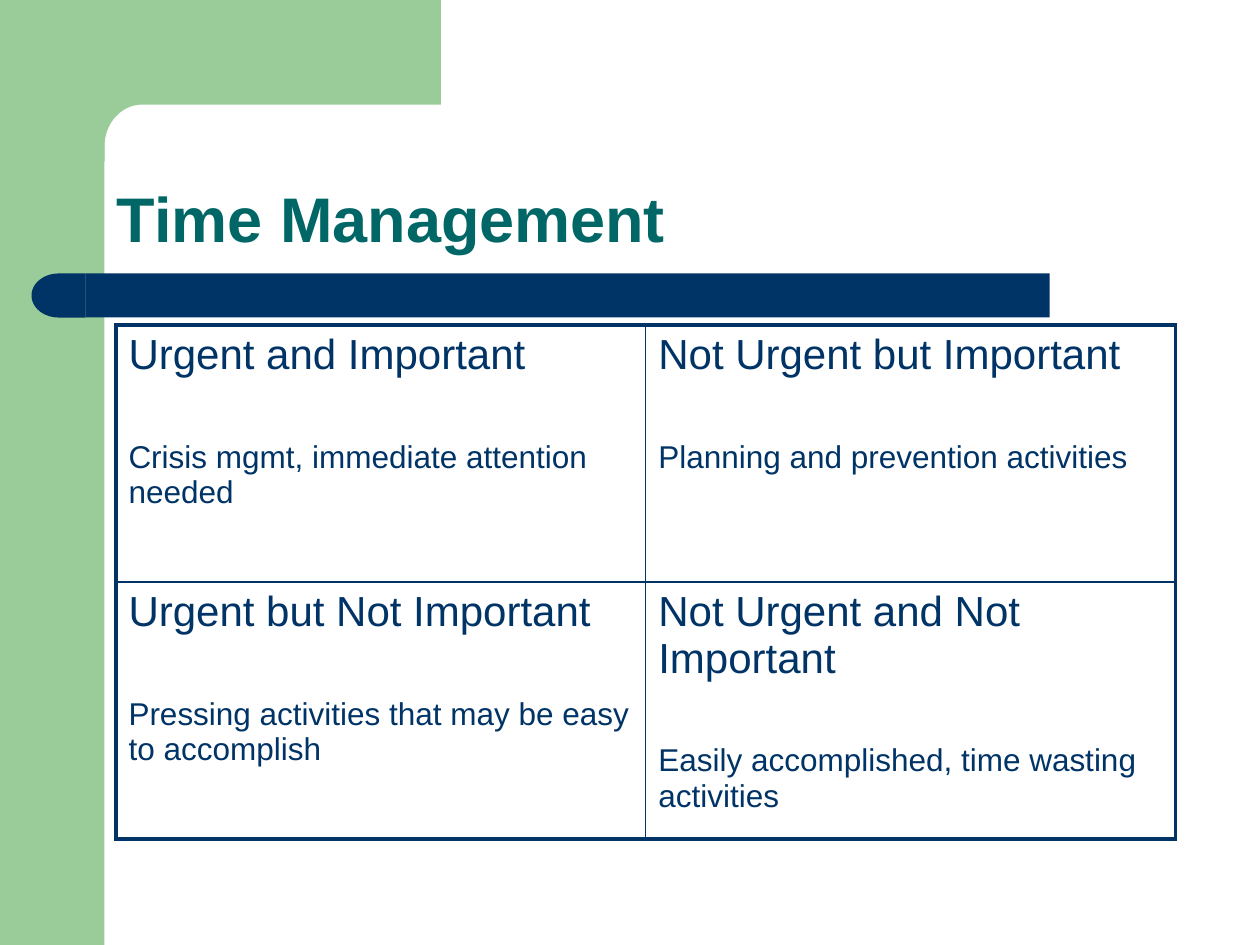
from math import cos, pi, sin

from lxml.etree import SubElement
from pptx import Presentation
from pptx.dml.color import RGBColor
from pptx.enum.shapes import MSO_SHAPE
from pptx.enum.text import MSO_ANCHOR
from pptx.oxml.ns import qn
from pptx.util import Inches, Pt

COLORS = {"green": "99CC99", "navy": "003366", "teal": "006666"}
TITLE = {"size": Pt(36), "bold": True, "name": "Arial"}
HEAD = {"size": Pt(24), "bold": False, "name": "Arial"}
BODY = {"size": Pt(18), "bold": False, "name": "Arial"}
GRID = [
    [("Urgent and Important", "Crisis mgmt, immediate attention needed"),
     ("Not Urgent but Important", "Planning and prevention activities")],
    [("Urgent but Not Important",
      "Pressing activities that may be easy to accomplish"),
     ("Not Urgent and Not Important",
      "Easily accomplished, time wasting activities")],
]


def color(name):
    return RGBColor.from_string(COLORS[name])


def paint(shape, name):
    shape.shadow.inherit = False
    shape.fill.solid()
    shape.fill.fore_color.rgb = color(name)
    shape.line.fill.background()


def write(para, text, style, name):
    run = para.add_run()
    run.text = text
    for key, value in style.items():
        setattr(run.font, key, value)
    run.font.color.rgb = color(name)


def add_frame(slide, left, top, width, height):
    """Green side strip and top band, with a rounded inner corner."""
    side = Inches(0.83)
    strip = slide.shapes.add_shape(MSO_SHAPE.RECTANGLE, left, top, side, height)
    paint(strip, "green")

    inner, band = left + side, top + Inches(0.83)
    wide, high = Inches(0.3), Inches(0.33)
    steps = 24
    curve = [(inner + wide * (1 - sin(pi / 2 * i / steps)),
              band + high * (1 - cos(pi / 2 * i / steps)))
             for i in range(steps, -1, -1)]
    curve = curve[::-1]
    start, low = left + Inches(0.5), top + Inches(1.28)
    pen = slide.shapes.build_freeform(start, top)
    pen.add_line_segments(
        [(start, low), (inner, low)] + curve_up(curve, inner, band, wide, high)
        + [(left + width, band), (left + width, top)])
    paint(pen.convert_to_shape(), "green")


def curve_up(curve, inner, band, wide, high):
    """Quarter arc from the side strip up to the top band."""
    count = len(curve) - 1
    return [(inner + wide * (1 - cos(pi / 2 * i / count)),
             band + high * (1 - sin(pi / 2 * i / count)))
            for i in range(count + 1)]


def add_bar(slide, left, top, width, height):
    """Navy bar with a round left end."""
    cap = Inches(0.43)
    bar = slide.shapes.add_shape(
        MSO_SHAPE.RECTANGLE, left + cap, top, width - cap, height)
    end = slide.shapes.add_shape(
        MSO_SHAPE.FLOWCHART_DELAY, left, top, cap, height)
    end.rotation = 180
    for shape in (bar, end):
        paint(shape, "navy")


def add_title(slide, text, *box):
    frame = slide.shapes.add_textbox(*box).text_frame
    frame.word_wrap = True
    frame.vertical_anchor = MSO_ANCHOR.BOTTOM
    para = frame.paragraphs[0]
    para.line_spacing = 0.9
    write(para, text, TITLE, "teal")


def add_edge(cell, side, width):
    props = cell._tc.get_or_add_tcPr()
    line = SubElement(props, qn(f"a:ln{side}"), w=str(Pt(width)))
    fill = SubElement(line, qn("a:solidFill"))
    SubElement(fill, qn("a:srgbClr"), val=COLORS["navy"])


def add_grid(slide, left, top, width, height):
    rows, cols = len(GRID), len(GRID[0])
    table = slide.shapes.add_table(
        rows, cols, left, top, width, height).table
    table.first_row = table.horz_banding = False
    for r, row in enumerate(GRID):
        for c, (head, body) in enumerate(row):
            cell = table.cell(r, c)
            outer = {"L": c == 0, "R": c == cols - 1,
                     "T": r == 0, "B": r == rows - 1}
            for side, thick in outer.items():
                add_edge(cell, side, 2.25 if thick else 1)
            cell.fill.background()
            frame = cell.text_frame
            write(frame.paragraphs[0], head, HEAD, "navy")
            para = frame.add_paragraph()
            para.space_before = Pt(35)
            write(para, body, BODY, "navy")


def main():
    deck = Presentation()
    deck.slide_width, deck.slide_height = Inches(10), Inches(7.5)
    slide = deck.slides.add_slide(deck.slide_layouts[6])
    add_frame(slide, 0, 0, Inches(3.5), deck.slide_height)
    add_bar(slide, Inches(0.25), Inches(2.17), Inches(8.08), Inches(0.35))
    add_title(slide, "Time Management",
              Inches(0.83), Inches(0.83), Inches(8.67), Inches(1.25))
    add_grid(slide, Inches(0.92), Inches(2.58), Inches(8.41), Inches(4.08))
    deck.save("out.pptx")


if __name__ == "__main__":
    main()
